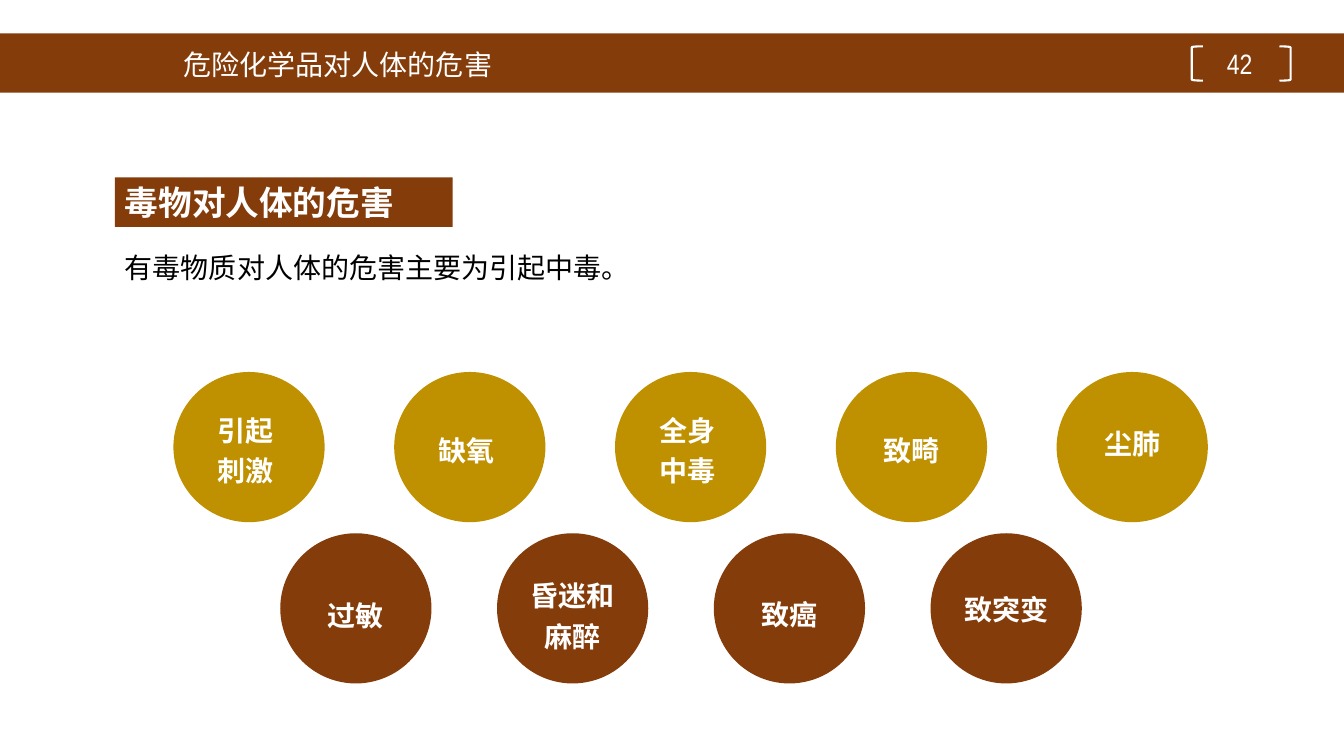
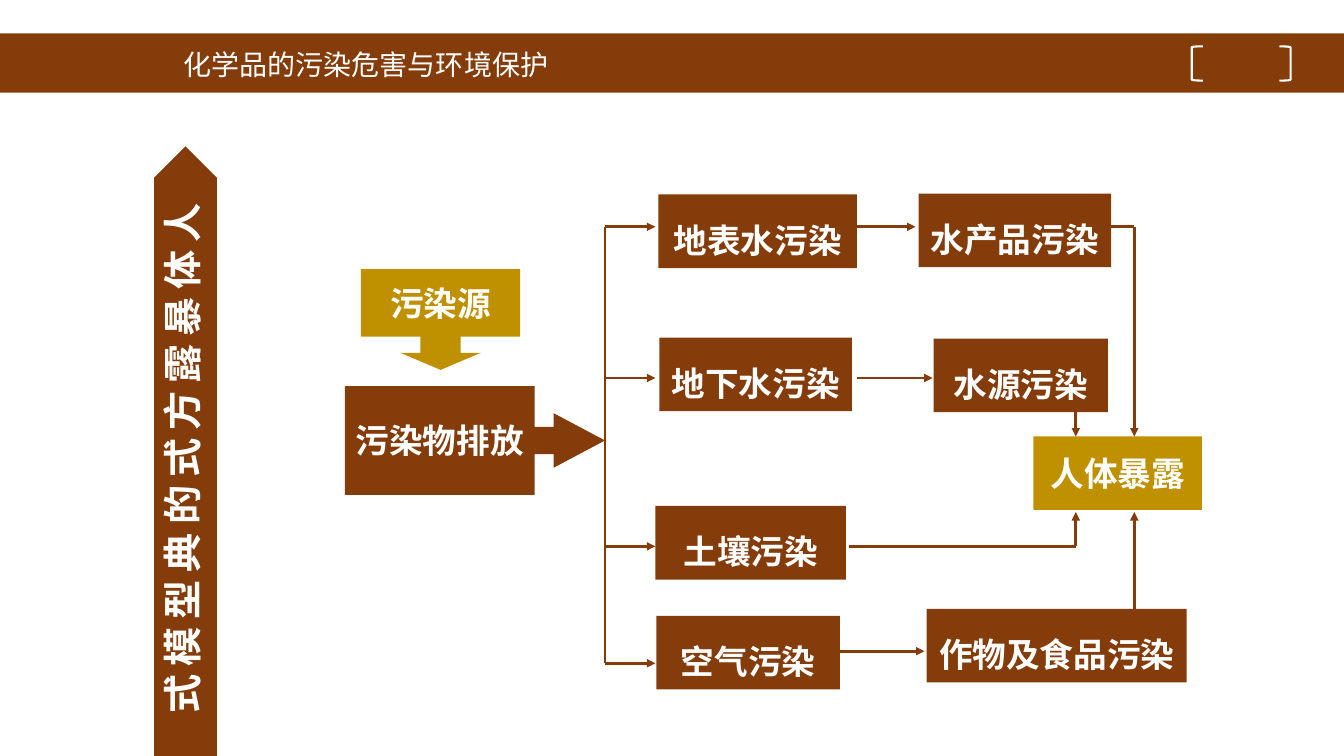
from dataclasses import dataclass
from itertools import pairwise

from pptx import Presentation
from pptx.dml.color import RGBColor
from pptx.enum.lang import MSO_LANGUAGE_ID
from pptx.enum.shapes import MSO_CONNECTOR, MSO_SHAPE
from pptx.enum.text import MSO_ANCHOR, MSO_AUTO_SIZE, PP_ALIGN
from pptx.oxml.ns import qn
from pptx.util import Inches, Pt
from lxml import etree

BROWN, GOLD, WHITE, BLACK = "843C0B", "BF9000", "FFFFFF", "000000"
FONT, BODY_FONT = "Arial Narrow", "Noto Sans CJK SC"


@dataclass
class Circle:
    text: str
    dx: float = 0
    dy: float = 0


@dataclass
class CircleRow:
    left: float
    top: float
    pitch: float
    color: str
    circles: list[Circle]


@dataclass
class Box:
    text: str
    left: float
    top: float
    width: float
    height: float = 0.73
    color: str = BROWN
    kind: MSO_SHAPE = MSO_SHAPE.RECTANGLE
    adjustments: tuple[float, ...] = ()
    anchor: MSO_ANCHOR = MSO_ANCHOR.TOP
    spacing: float = 1.5


@dataclass
class Route:
    """A line through the points, ending in an arrowhead unless arrow is False."""
    points: list[tuple[float, float]]
    arrow: bool = True


CIRCLE_ROWS = [
    CircleRow(1.72, 3.69, 2.19, GOLD, [
        Circle("引起\n刺激", -0.03), Circle("缺氧", -0.03), Circle("全身\n中毒", -0.03),
        Circle("致畸"), Circle("尘肺", dy=-0.07)]),
    CircleRow(2.78, 5.29, 2.15, BROWN, [
        Circle("过敏", dy=0.04), Circle("昏迷和\n麻醉", dy=0.04),
        Circle("致癌", dy=0.03), Circle("致突变", dy=-0.02)]),
]

BOXES = [
    Box("污染源", 3.58, 2.67, 1.58, 1, GOLD, MSO_SHAPE.DOWN_ARROW_CALLOUT,
        (0.4, 0.4, 0.17, 0.67), MSO_ANCHOR.MIDDLE, 1),
    Box("污染物排放", 3.42, 3.83, 2.58, 1.08, BROWN, MSO_SHAPE.RIGHT_ARROW_CALLOUT,
        (0.25, 0.25, 0.47, 0.73), MSO_ANCHOR.MIDDLE, 1),
    Box("地表水污染", 6.53, 1.93, 1.97),
    Box("水产品污染", 9.11, 1.92, 1.91),
    Box("地下水污染", 6.54, 3.35, 1.91),
    Box("水源污染", 9.26, 3.36, 1.73),
    Box("人体暴露", 10.25, 4.33, 1.67, color=GOLD, anchor=MSO_ANCHOR.MIDDLE, spacing=1),
    Box("土壤污染", 6.5, 5.02, 1.89),
    Box("空气污染", 6.51, 6.11, 1.82),
    Box("作物及食品污染", 9.19, 6.04, 2.58),
]

TRUNK_X, BRANCH_YS = 6, (2.25, 3.75, 5.42, 6.58)
ROUTES = [
    Route([(TRUNK_X, BRANCH_YS[0]), (TRUNK_X, BRANCH_YS[-1])], arrow=False),
    *(Route([(TRUNK_X, y), (6.5, y)]) for y in BRANCH_YS),
    Route([(8.33, 6.46), (9.17, 6.46)]),
    Route([(8.42, 2.25), (9.08, 2.25)]),
    Route([(8.5, 3.75), (9.25, 3.75)]),
    Route([(8.42, 5.42), (10.67, 5.42), (10.67, 5.08)]),
    Route([(11.25, 6.17), (11.25, 5.08)]),
    Route([(11, 2.25), (11.25, 2.25), (11.25, 4.33)]),
    Route([(10.67, 4.08), (10.67, 4.33)]),
]


def rgb(color: str) -> RGBColor:
    return RGBColor.from_string(color)


def write(sp, text: str, *, size: float = 20, bold: bool = False, color: str = WHITE,
          font: str = FONT, align=PP_ALIGN.LEFT, anchor=MSO_ANCHOR.MIDDLE,
          spacing: float = 1, wrap: bool = True):
    """Fill a shape with text, one paragraph a line."""
    tf = sp.text_frame
    tf.auto_size = MSO_AUTO_SIZE.NONE
    tf.word_wrap = wrap
    tf.vertical_anchor = anchor
    for i, line in enumerate(text.split("\n")):
        p = tf.add_paragraph() if i else tf.paragraphs[0]
        p.alignment = align
        p.line_spacing = spacing
        p.space_before = Pt(0)
        r = p.add_run()
        r.text = line
        r.font.size, r.font.bold, r.font.name = Pt(size), bold, font
        r.font.language_id = MSO_LANGUAGE_ID.SIMPLIFIED_CHINESE
        r.font.color.rgb = rgb(color)
        latin = r.font._element.find(qn("a:latin"))
        ea = etree.Element(qn("a:ea"), typeface=font)
        latin.addnext(ea)
    return tf


def add_shape(slide, kind, left: float, top: float, width: float, height: float,
              fill: str | None = None, line: str | None = None, line_width: float = 1):
    sp = slide.shapes.add_shape(kind, Inches(left), Inches(top), Inches(width), Inches(height))
    sp.shadow.inherit = False
    if fill:
        sp.fill.solid()
        sp.fill.fore_color.rgb = rgb(fill)
    else:
        sp.fill.background()
    if line:
        sp.line.color.rgb = rgb(line)
        sp.line.width = Pt(line_width)
    else:
        sp.line.fill.background()
    return sp


def add_textbox(slide, text: str, left: float, top: float, width: float, height: float,
                **style):
    sp = slide.shapes.add_textbox(Inches(left), Inches(top), Inches(width), Inches(height))
    write(sp, text, **style)


def add_segment(slide, start: tuple[float, float], end: tuple[float, float], arrow: bool):
    ends = (Inches(v) for v in (*start, *end))
    line = slide.shapes.add_connector(MSO_CONNECTOR.STRAIGHT, *ends)
    line.line.color.rgb = rgb(BROWN)
    line.line.width = Pt(2)
    if arrow:
        etree.SubElement(line.line._get_or_add_ln(), qn("a:tailEnd"), type="triangle")
    etree.SubElement(line.element.spPr, qn("a:effectLst"))


def add_route(slide, route: Route):
    segments = list(pairwise(route.points))
    for i, (start, end) in enumerate(segments, 1):
        add_segment(slide, start, end, route.arrow and i == len(segments))


def add_circle_row(slide, row: CircleRow):
    for i, circle in enumerate(row.circles):
        sp = add_shape(slide, MSO_SHAPE.OVAL, row.left + i * row.pitch, row.top,
                       1.5, 1.49, row.color)
        tf = write(sp, circle.text, bold=True, align=PP_ALIGN.CENTER, spacing=1.2, wrap=False)
        tf.margin_left, tf.margin_right = (Inches(max(0, s * circle.dx)) for s in (2, -2))
        tf.margin_top, tf.margin_bottom = (Inches(max(0, s * circle.dy)) for s in (2, -2))


def add_box(slide, box: Box):
    sp = add_shape(slide, box.kind, box.left, box.top, box.width, box.height, box.color)
    for i, value in enumerate(box.adjustments):
        sp.adjustments[i] = value
    write(sp, box.text, size=24, bold=True, align=PP_ALIGN.CENTER, anchor=box.anchor,
          spacing=box.spacing, wrap=False)


def put_band_on_layout(slide):
    """Draw the header band and brackets, then hand them to the slide's layout."""
    layout = slide.slide_layout
    for ph in list(layout.placeholders)[1:]:
        ph.element.getparent().remove(ph.element)
    band = add_shape(slide, MSO_SHAPE.RECTANGLE, 0, 0.33, 13.33, 0.59, BROWN)
    brackets = []
    for left, rotation in ((11.82, 0), (12.69, 180)):
        sp = add_shape(slide, MSO_SHAPE.LEFT_BRACKET, left, 0.46, 0.11, 0.34,
                       line=WHITE, line_width=1.5)
        sp.rotation = rotation
        brackets.append(sp)
    for sp in (band, *brackets):
        layout.shapes.element.append(sp.element)


def add_titled_slide(prs, title: str):
    slide = prs.slides.add_slide(prs.slide_layouts[5])
    sp = slide.shapes.title
    sp.left, sp.top, sp.width, sp.height = (Inches(v) for v in (1.72, 0.43, 5, 0.45))
    write(sp, title, spacing=0.9)
    return slide


def build_harm_slide(prs):
    slide = add_titled_slide(prs, "危险化学品对人体的危害")
    put_band_on_layout(slide)
    add_textbox(slide, "42", 11.97, 0.43, 0.65, 0.4, align=PP_ALIGN.CENTER)
    heading = add_shape(slide, MSO_SHAPE.RECTANGLE, 1.14, 1.76, 3.35, 0.49, BROWN)
    write(heading, "毒物对人体的危害", size=24, bold=True)
    add_textbox(slide, "有毒物质对人体的危害主要为引起中毒。", 1.14, 2.32, 8.24, 0.51,
                color=BLACK, font=BODY_FONT, anchor=MSO_ANCHOR.TOP, spacing=1.35)
    for row in CIRCLE_ROWS:
        add_circle_row(slide, row)


def build_exposure_slide(prs):
    slide = add_titled_slide(prs, "化学品的污染危害与环境保护")
    for box in BOXES:
        add_box(slide, box)
    for route in ROUTES:
        add_route(slide, route)
    banner = add_shape(slide, MSO_SHAPE.PENTAGON, -1.2, 4.16, 6.08, 0.64, BROWN, WHITE)
    banner.rotation = 270
    tf = write(banner, "人体暴露方式的典型模式", size=28, bold=True, align=PP_ALIGN.CENTER)
    tf._txBody.bodyPr.set("vert", "eaVert")


def main():
    prs = Presentation()
    prs.slide_width, prs.slide_height = Inches(13.33), Inches(7.5)
    build_harm_slide(prs)
    build_exposure_slide(prs)
    prs.save("out.pptx")


if __name__ == "__main__":
    main()
